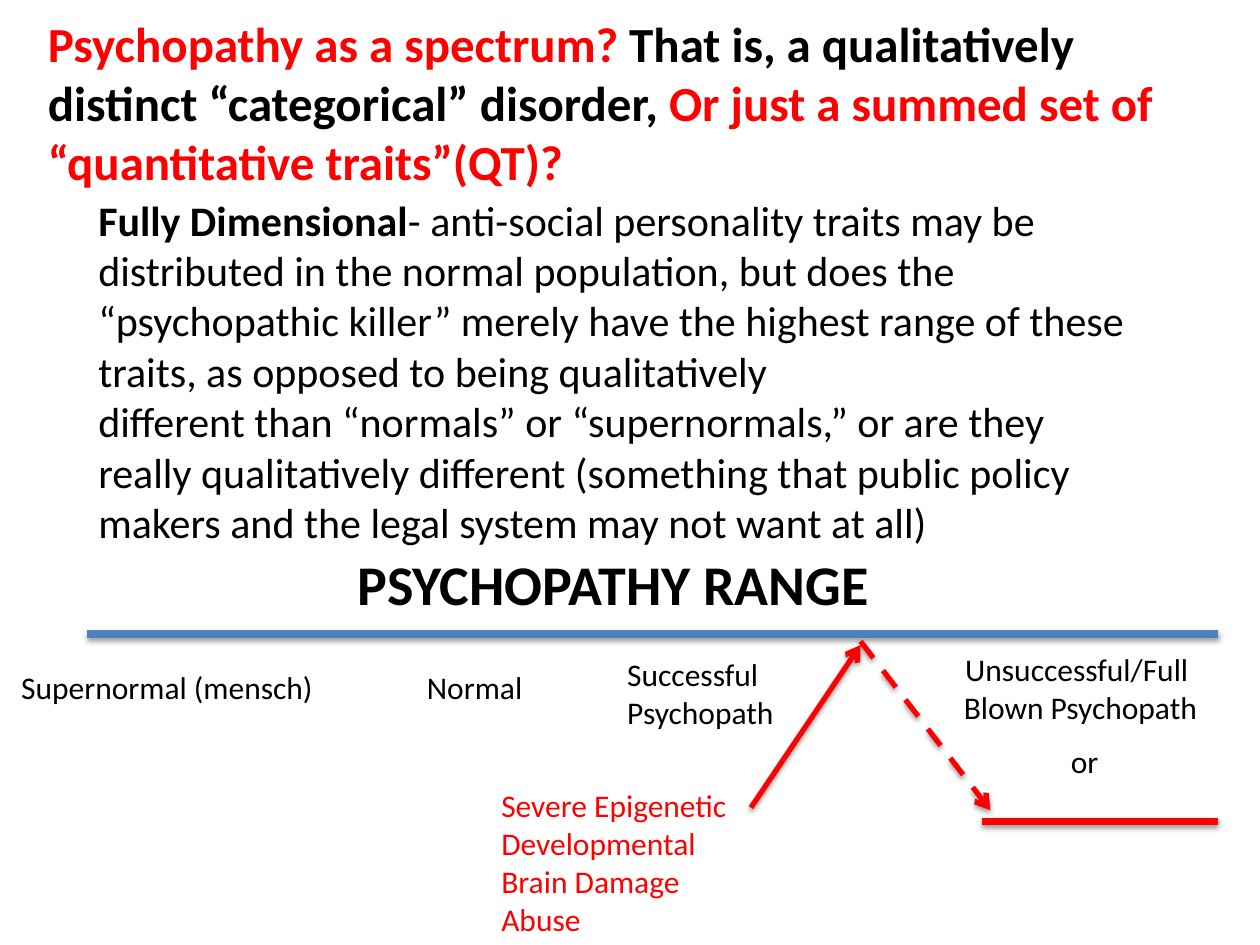
from lxml.etree import SubElement
from pptx import Presentation
from pptx.dml.color import RGBColor
from pptx.enum.dml import MSO_LINE
from pptx.enum.shapes import MSO_CONNECTOR
from pptx.enum.text import MSO_ANCHOR, MSO_AUTO_SIZE, PP_ALIGN
from pptx.oxml.ns import qn
from pptx.util import Inches, Pt

THEME = {
    "font": "Calibri",
    "black": RGBColor(0, 0, 0),
    "red": RGBColor(0xFF, 0, 0),
    "blue": RGBColor(0x4F, 0x81, 0xBD),
    "title": 28,
    "body": 24,
    "heading": 32,
    "label": 18,
    "axis": 4.5,
    "arrow": 3,
}

TITLE_BOX = (0.28, 0.06, 9.18, 1.51)
TITLE = [
    [("Psychopathy as a spectrum?", "red", True), (" That is, a qualitatively", "black", True)],
    [("distinct “categorical” disorder, ", "black", True), ("Or just a summed set of", "red", True)],
    [("“quantitative traits”(QT)?", "red", True)],
]

BODY_BOX = (0.68, 1.49, 8.71, 2.93)
BODY = [
    [("Fully Dimensional", "black", True), ("- anti-social personality traits may be", "black", False)],
    [("distributed in the normal population, but does the “psychopathic killer” merely have "
      "the highest range of these traits, as opposed to being qualitatively", "black", False)],
    [("different than “normals” or “supernormals,” or are they", "black", False)],
    [("really qualitatively different (something that public policy makers and the legal "
      "system may not want at all)", "black", False)],
]

HEADING_BOX = (2.74, 4.31, 4.29, 0.64)
HEADING = [[("PSYCHOPATHY RANGE", "black", True)]]

LABELS = [
    ((0.07, 5.25, 2.54, 0.4), ["Supernormal (mensch)"], "black", PP_ALIGN.LEFT),
    ((3.29, 5.25, 0.97, 0.4), ["Normal"], "black", PP_ALIGN.LEFT),
    ((4.88, 5.15, 1.37, 0.71), ["Successful", "Psychopath"], "black", PP_ALIGN.LEFT),
    ((7.54, 5.11, 2.07, 0.71), ["Unsuccessful/Full ", "Blown Psychopath"], "black", PP_ALIGN.CENTER),
    ((8.4, 5.84, 0.42, 0.4), ["or"], "black", PP_ALIGN.LEFT),
    ((3.88, 6.19, 2.01, 1.31),
     ["Severe Epigenetic", "Developmental", "Brain Damage", "Abuse"], "red", PP_ALIGN.LEFT),
]

LINES = [
    ((0.69, 5.03), (9.67, 5.03), "blue", "axis", False, False),
    ((7.79, 6.52), (9.67, 6.52), "red", "axis", False, False),
    ((6.83, 5.09), (7.86, 6.43), "red", "arrow", True, True),
    ((5.96, 6.41), (6.83, 5.12), "red", "arrow", False, True),
]


def place(shape, box):
    shape.left, shape.top, shape.width, shape.height = map(Inches, box)


def write(shape, paragraphs, size, alignment=PP_ALIGN.LEFT, wrap=False):
    frame = shape.text_frame
    frame.word_wrap = wrap
    frame.auto_size = MSO_AUTO_SIZE.NONE
    frame.vertical_anchor = MSO_ANCHOR.TOP
    for index, runs in enumerate(paragraphs):
        paragraph = frame.add_paragraph() if index else frame.paragraphs[0]
        paragraph.alignment = alignment
        paragraph.space_before = Pt(0)
        for text, color, bold in runs:
            run = paragraph.add_run()
            run.text = text
            run.font.name = THEME["font"]
            run.font.size = Pt(THEME[size])
            run.font.bold = bold
            run.font.color.rgb = THEME[color]


def remove_bullets(shape):
    for paragraph in shape.text_frame.paragraphs:
        properties = paragraph._p.get_or_add_pPr()
        properties.set("marL", "0")
        properties.set("indent", "0")
        SubElement(properties, qn("a:buNone"))


def add_text(slide, box, paragraphs, size, alignment=PP_ALIGN.LEFT):
    shape = slide.shapes.add_textbox(*map(Inches, box))
    write(shape, paragraphs, size, alignment)


def add_shadow(connector):
    effects = SubElement(connector._element.spPr, qn("a:effectLst"))
    shadow = SubElement(effects, qn("a:outerShdw"), blurRad=str(Pt(3.1)), dist=str(Pt(1.6)),
                        dir="5400000", rotWithShape="0")
    color = SubElement(shadow, qn("a:srgbClr"), val="000000")
    SubElement(color, qn("a:alpha"), val="38000")


def add_line(slide, start, end, color, weight, dashed, arrow):
    connector = slide.shapes.add_connector(MSO_CONNECTOR.STRAIGHT, *map(Inches, start + end))
    connector.line.color.rgb = THEME[color]
    connector.line.width = Pt(THEME[weight])
    if dashed:
        connector.line.dash_style = MSO_LINE.DASH
    if arrow:
        SubElement(connector.line._get_or_add_ln(), qn("a:tailEnd"), type="arrow")
    add_shadow(connector)


def main():
    presentation = Presentation()
    presentation.slide_width, presentation.slide_height = Inches(10), Inches(7.5)
    slide = presentation.slides.add_slide(presentation.slide_layouts[1])

    title, body = slide.shapes.title, slide.placeholders[1]
    place(title, TITLE_BOX)
    write(title, TITLE, "title")
    place(body, BODY_BOX)
    write(body, BODY, "body", wrap=True)
    remove_bullets(body)

    add_text(slide, HEADING_BOX, HEADING, "heading")
    for line in LINES:
        add_line(slide, *line)
    for box, texts, color, alignment in LABELS:
        add_text(slide, box, [[(text, color, False)] for text in texts], "label", alignment)

    presentation.save("out.pptx")


if __name__ == "__main__":
    main()
